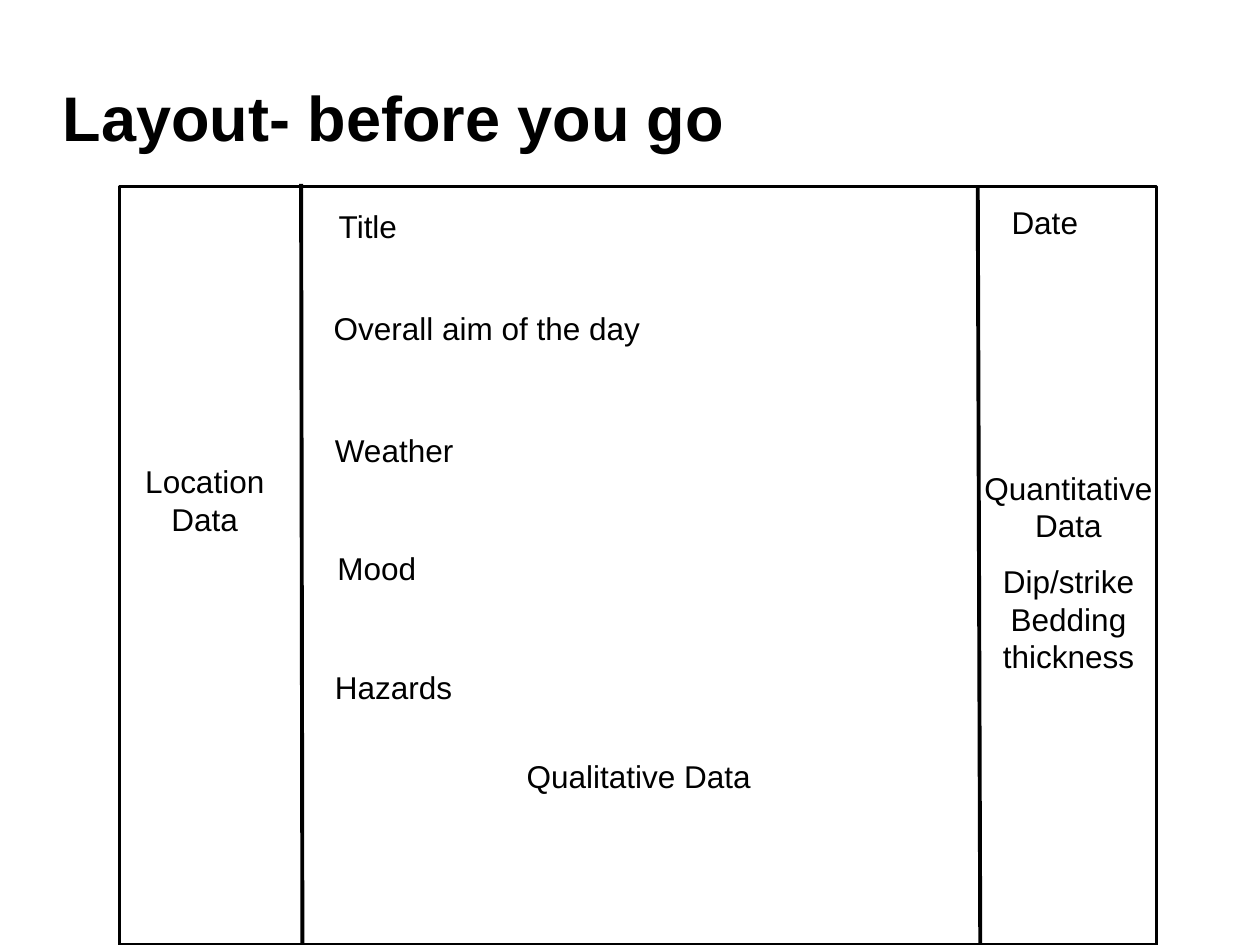
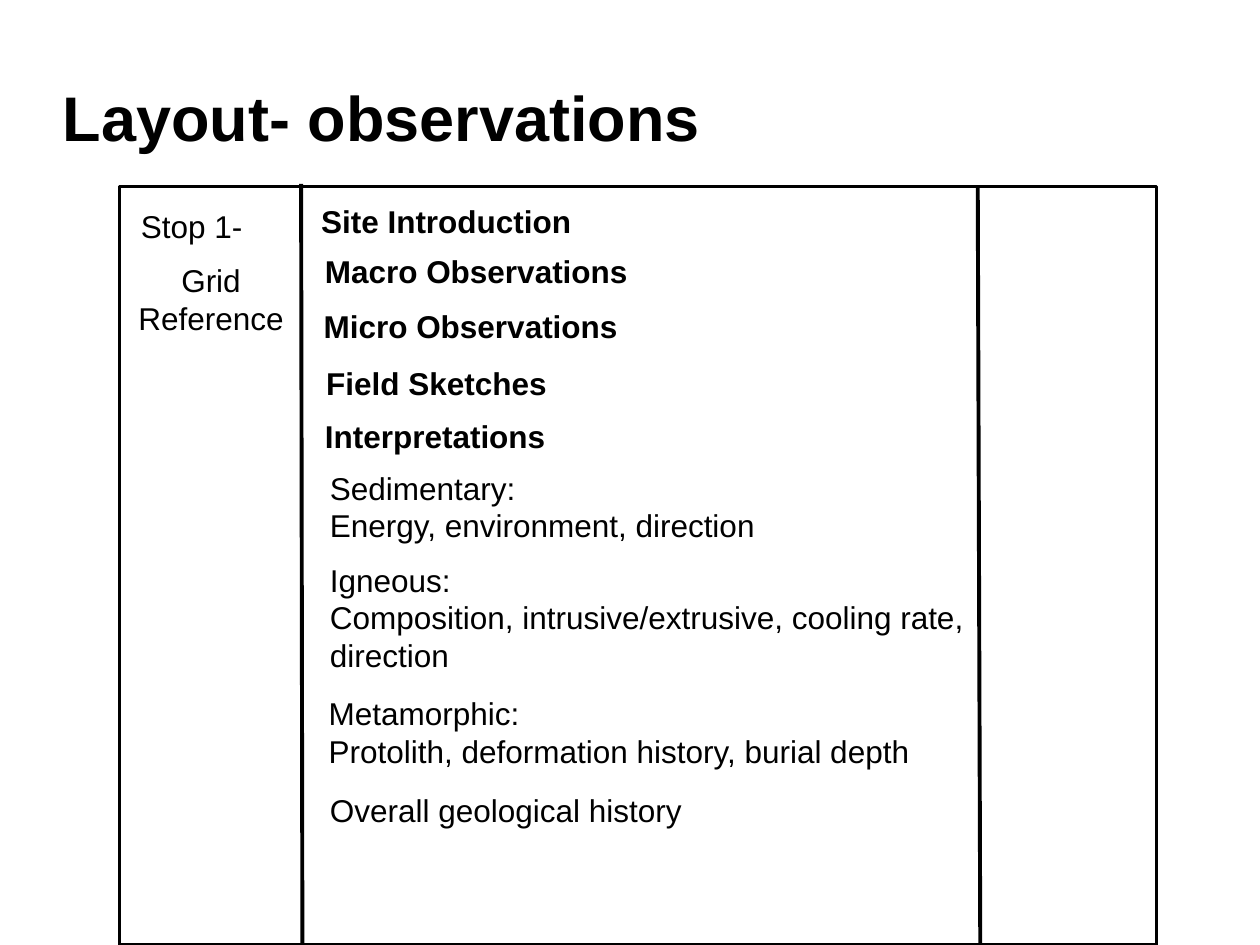
"""Field notebook layouts, set on a grid of 100 columns by 75 rows."""
from dataclasses import dataclass

from lxml import etree
from pptx import Presentation
from pptx.dml.color import RGBColor
from pptx.enum.shapes import MSO_CONNECTOR, MSO_SHAPE
from pptx.enum.text import MSO_ANCHOR, MSO_AUTO_SIZE, PP_ALIGN
from pptx.oxml.ns import qn
from pptx.util import Inches, Pt

RECT = MSO_SHAPE.RECTANGLE
LINE = MSO_CONNECTOR.STRAIGHT
MID = MSO_ANCHOR.MIDDLE
GROW = MSO_AUTO_SIZE.SHAPE_TO_FIT_TEXT
LEFT, CENTER = PP_ALIGN.LEFT, PP_ALIGN.CENTER

WIDE, HIGH = Inches(10), Inches(7.5)
COLS, ROWS = 100, 75
HEAD = (5, 3, 90, 12.5)
PAGE = (9.5, 14.8, 82.3, 60.2)
RULES = ((14.4, -0.2, 14.5, 60.2), (68.1, -0.1, 68.3, 60.2))


@dataclass(frozen=True)
class Theme:
    """Colours, font and sizes that the slides share."""
    ink: RGBColor = RGBColor(0, 0, 0)
    paper: RGBColor = RGBColor(255, 255, 255)
    font: str = "Arial"
    head: int = 36
    body: int = 18
    edge: float = 2
    rule: float = 2.25


THEME = Theme()


def across(cols):
    """Turn columns into a length."""
    return round(cols * WIDE / COLS)


def down(rows):
    """Turn rows into a length."""
    return round(rows * HIGH / ROWS)


def place(box):
    """Turn a grid box into left, top, width and height."""
    x, y, w, h = box
    return across(x), down(y), across(w), down(h)


def write(frame, lines, size, bold=False, align=LEFT):
    """Fill a text frame with one paragraph for each line."""
    frame.word_wrap = True
    for i, line in enumerate(lines):
        para = frame.paragraphs[0] if i == 0 else frame.add_paragraph()
        para.alignment = align
        run = para.add_run()
        run.text = line
        font = run.font
        font.name, font.size, font.bold = THEME.font, Pt(size), bold
        font.color.rgb = THEME.ink


def title(slide, text, box=HEAD):
    """Set the slide's heading."""
    frame = slide.shapes.add_textbox(*place(box)).text_frame
    frame.margin_left = frame.margin_right = 0
    frame.margin_top = frame.margin_bottom = 0
    frame.vertical_anchor = MID
    write(frame, [text], THEME.head, True)


def page(slide, box=PAGE):
    """Draw the notebook page and the rules between its columns."""
    sheet = slide.shapes.add_shape(RECT, *place(box))
    sheet.shadow.inherit = False
    sheet.fill.solid()
    sheet.fill.fore_color.rgb = THEME.paper
    sheet.line.color.rgb = THEME.ink
    sheet.line.width = Pt(THEME.edge)
    left, top = box[:2]
    group = slide.shapes.add_group_shape()
    for x1, y1, x2, y2 in RULES:
        rule = group.shapes.add_connector(
            LINE, across(left + x1), down(top + y1),
            across(left + x2), down(top + y2))
        rule.line.color.rgb = THEME.ink
        rule.line.width = Pt(THEME.rule)
        etree.SubElement(rule._element.spPr, qn("a:effectLst"))


def note(slide, x, y, wide, *lines, rows=1, bold=False, align=LEFT, box=PAGE):
    """Write a note at an offset from the page's corner."""
    spot = (box[0] + x, box[1] + y, wide, 1 + 3.05 * rows)
    frame = slide.shapes.add_textbox(*place(spot)).text_frame
    write(frame, lines, THEME.body, bold, align)
    frame.auto_size = GROW


def plan(slide):
    """Lay out the page to prepare before the trip."""
    title(slide, "Layout- before you go")
    page(slide)
    for x, y, text in ((16.4, 1.1, "Title"),
                       (16, 9.2, "Overall aim of the day"),
                       (16.1, 18.9, "Weather"),
                       (16.3, 28.3, "Mood"),
                       (16.1, 37.7, "Hazards")):
        note(slide, x, y, 46, text)
    note(slide, 69.8, 0.8, 9.6, "Date")
    for x, y, wide, rows, lines in (
            (0.5, 21.4, 12.5, 2, ["Location Data"]),
            (17.2, 44.8, 48, 1, ["Qualitative Data"]),
            (66.5, 21.9, 17.6, 2, ["Quantitative Data"]),
            (68.4, 29.3, 13.8, 3, ["Dip/strike", "Bedding", "thickness"])):
        note(slide, x, y, wide, *lines, rows=rows, align=CENTER)


def study(slide):
    """Lay out the page for observations at a stop."""
    title(slide, "Layout- observations")
    page(slide)
    note(slide, 0.7, 1.1, 13, "Stop 1-")
    note(slide, 0, 5.4, 14.5, "Grid Reference", rows=2, align=CENTER)
    for x, y, text in ((15, 0.7, "Site Introduction"),
                       (15.3, 4.7, "Macro Observations"),
                       (15.2, 9.1, "Micro Observations"),
                       (15.4, 13.6, "Field Sketches"),
                       (15.3, 17.8, "Interpretations")):
        note(slide, x, y, 52.5, text, bold=True)
    for x, y, rows, lines in (
            (15.7, 21.9, 2, ["Sedimentary:",
                             "Energy, environment, direction"]),
            (15.7, 29.2, 3, ["Igneous:",
                             "Composition, intrusive/extrusive, "
                             "cooling rate, direction"]),
            (15.6, 39.8, 2, ["Metamorphic:",
                             "Protolith, deformation history, "
                             "burial depth"]),
            (15.7, 47.5, 1, ["Overall geological history"])):
        note(slide, x, y, 52.5, *lines, rows=rows)


def main():
    """Build the slides and save them."""
    deck = Presentation()
    deck.slide_width, deck.slide_height = WIDE, HIGH
    blank = deck.slide_layouts[6]
    for build in (plan, study):
        build(deck.slides.add_slide(blank))
    deck.save("out.pptx")


if __name__ == "__main__":
    main()
